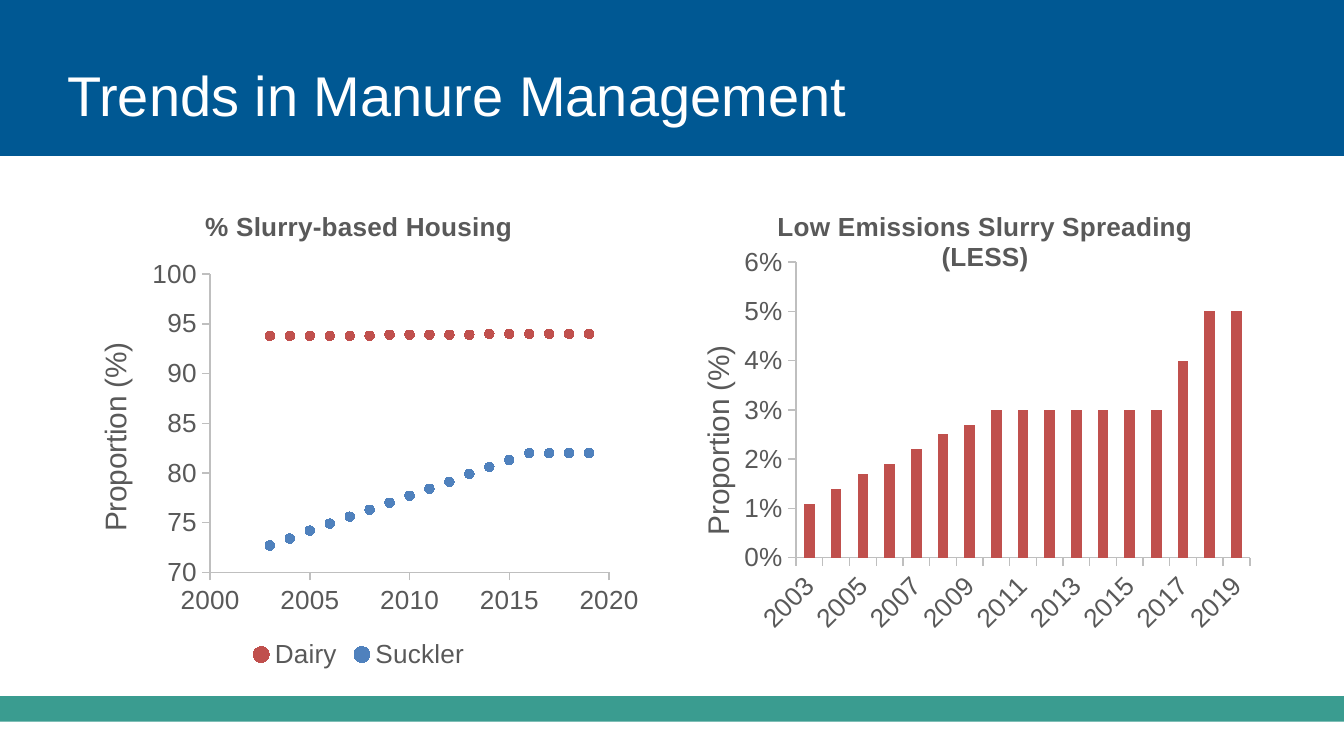
import pptx
import pptx.chart.data
import pptx.dml.color
import pptx.enum.chart
import pptx.enum.shapes
import pptx.enum.text
import pptx.oxml
import pptx.oxml.ns
import pptx.util
from pptx.util import Inches

# Content; plot boxes are percentages of the chart: left, top, width, height
TITLE = "Trends in Manure Management"
YEARS = list(range(2003, 2020))
AXIS_TITLE = "Proportion (%)"
HOUSING = {
    "title": "% Slurry-based Housing",
    "scale": (70, 100, 5),
    "format": "0",
    "plot": (24.5, 17.7, 68.4, 61.3),
    "series": {
        "Dairy": [93.8] * 6 + [93.9] * 5 + [94] * 6,
        "Suckler": [72.7, 73.4, 74.2, 74.9, 75.6, 76.3, 77, 77.7, 78.4,
                    79.1, 79.9, 80.6, 81.3, 82, 82, 82, 82],
    },
}
SPREADING = {
    "title": "Low Emissions Slurry Spreading (LESS)",
    "scale": (0, 0.06, 0.01),
    "format": "0%",
    "plot": (17.6, 15.2, 77.8, 60.8),
    "series": {
        "Series 1": [0.011, 0.014, 0.017, 0.019, 0.022, 0.025, 0.027]
                    + [0.03] * 7 + [0.04, 0.05, 0.05],
    },
}
THEME = {
    "font": "Arial",
    "band": "005893", "strip": "3A9C90", "title": "FFFFFF",
    "text": "595959", "axis": "BFBFBF", "series": ["C0504D", "4F81BD"],
    "title_size": 30, "axis_title_size": 16, "chart_size": 14,
}
MARGIN, CHART_TOP, CHART_WIDTH, CHART_HEIGHT = 0.5, 1.4, 4.34, 3.62
SLIDE_WIDTH = 10
SLIDE_HEIGHT = SLIDE_WIDTH * 9 / 16


def color(value):
    return pptx.dml.color.RGBColor.from_string(value)


def style_font(font, size, value, bold=False):
    font.name, font.bold = THEME["font"], bold
    font.size = pptx.util.Pt(size)
    font.color.rgb = color(value)


def add_band(slide, top, height, fill):
    shape = slide.shapes.add_shape(
        pptx.enum.shapes.MSO_SHAPE.RECTANGLE,
        0, Inches(top), Inches(SLIDE_WIDTH), Inches(height))
    shape.shadow.inherit = False
    shape.fill.solid()
    shape.fill.fore_color.rgb = color(fill)
    shape.line.fill.background()
    return shape


def add_title_text(text_frame, text, size, value, bold=False):
    run = text_frame.paragraphs[0].add_run()
    run.text = text
    style_font(run.font, size, value, bold)


def set_plot_layout(chart, box):
    plot_area = chart.plots[0]._element.getparent()
    for layout in plot_area.findall(pptx.oxml.ns.qn("c:layout")):
        plot_area.remove(layout)
    places = "".join(f'<c:{name} val="{percent / 100:.3f}"/>'
                     for name, percent in zip("xywh", box))
    plot_area.insert(0, pptx.oxml.parse_xml(
        f'<c:layout {pptx.oxml.ns.nsdecls("c")}><c:manualLayout>'
        '<c:layoutTarget val="inner"/><c:xMode val="edge"/><c:yMode val="edge"/>'
        f'{places}</c:manualLayout></c:layout>'))


def set_scale(axis, minimum, maximum, major):
    axis.minimum_scale, axis.maximum_scale = minimum, maximum
    axis.major_unit = major


def set_number_format(axis, number_format):
    axis.tick_labels.number_format = number_format
    axis.tick_labels.number_format_is_linked = False


def add_chart(slide, content, kind, data, column):
    left = MARGIN + column * (SLIDE_WIDTH - 2 * MARGIN - CHART_WIDTH)
    chart = slide.shapes.add_chart(
        kind, Inches(left), Inches(CHART_TOP),
        Inches(CHART_WIDTH), Inches(CHART_HEIGHT), data).chart
    style_font(chart.font, THEME["chart_size"], THEME["text"])
    chart.has_legend = False
    chart.has_title = True
    add_title_text(chart.chart_title.text_frame, content["title"],
                   THEME["chart_size"], THEME["text"], True)
    chart.plots[0].vary_by_categories = False
    # Axes
    for axis in (chart.category_axis, chart.value_axis):
        axis.has_major_gridlines = False
        axis.major_tick_mark = pptx.enum.chart.XL_TICK_MARK.OUTSIDE
        axis.minor_tick_mark = pptx.enum.chart.XL_TICK_MARK.NONE
        axis.format.line.color.rgb = color(THEME["axis"])
        axis.format.line.width = pptx.util.Pt(0.75)
        style_font(axis.tick_labels.font, THEME["chart_size"], THEME["text"])
    set_scale(chart.value_axis, *content["scale"])
    set_number_format(chart.value_axis, content["format"])
    add_title_text(chart.value_axis.axis_title.text_frame, AXIS_TITLE,
                   THEME["axis_title_size"], THEME["text"])
    set_plot_layout(chart, content["plot"])
    return chart


def add_housing_chart(slide):
    data = pptx.chart.data.XyChartData()
    for name, values in HOUSING["series"].items():
        series = data.add_series(name)
        for year, value in zip(YEARS, values):
            series.add_data_point(year, value)
    chart = add_chart(slide, HOUSING,
                      pptx.enum.chart.XL_CHART_TYPE.XY_SCATTER, data, 0)
    set_scale(chart.category_axis, 2000, 2020, 5)
    set_number_format(chart.category_axis, "0")
    for series, value in zip(chart.plots[0].series, THEME["series"]):
        series.smooth = False
        series.format.line.fill.background()
        series.marker.style = pptx.enum.chart.XL_MARKER_STYLE.CIRCLE
        series.marker.size = 5
        series.marker.format.fill.solid()
        series.marker.format.fill.fore_color.rgb = color(value)
        series.marker.format.line.color.rgb = color(value)
    chart.has_legend = True
    chart.legend.position = pptx.enum.chart.XL_LEGEND_POSITION.BOTTOM
    chart.legend.include_in_layout = False
    style_font(chart.legend.font, THEME["chart_size"], THEME["text"])


def add_spreading_chart(slide):
    data = pptx.chart.data.CategoryChartData()
    data.categories = [str(year) for year in YEARS]
    for name, values in SPREADING["series"].items():
        data.add_series(name, values)
    chart = add_chart(slide, SPREADING,
                      pptx.enum.chart.XL_CHART_TYPE.COLUMN_CLUSTERED, data, 1)
    chart.plots[0].gap_width = 150
    # Slanted year labels
    labels = chart.category_axis._element.find(pptx.oxml.ns.qn("c:txPr"))
    labels.find(pptx.oxml.ns.qn("a:bodyPr")).set("rot", str(-45 * 60000))
    fill = chart.plots[0].series[0].format.fill
    fill.solid()
    fill.fore_color.rgb = color(THEME["series"][0])


def main():
    presentation = pptx.Presentation()
    presentation.slide_width = Inches(SLIDE_WIDTH)
    presentation.slide_height = Inches(SLIDE_HEIGHT)
    slide = presentation.slides.add_slide(presentation.slide_layouts[5])

    # Bands, placed behind the title
    bands = [add_band(slide, -0.02, 1.18, THEME["band"]),
             add_band(slide, 5.18, 0.19, THEME["strip"])]
    title = slide.shapes.title
    for band in bands:
        title._element.addprevious(band._element)

    # Title
    title.left, title.top = Inches(MARGIN), Inches(0.23)
    title.width, title.height = Inches(9), Inches(0.94)
    frame = title.text_frame
    frame.margin_left = frame.margin_right = 0
    frame.margin_top = frame.margin_bottom = 0
    frame.vertical_anchor = pptx.enum.text.MSO_ANCHOR.MIDDLE
    frame.paragraphs[0].alignment = pptx.enum.text.PP_ALIGN.LEFT
    add_title_text(frame, TITLE, THEME["title_size"], THEME["title"])

    # Charts
    add_spreading_chart(slide)
    add_housing_chart(slide)
    presentation.save("out.pptx")


if __name__ == "__main__":
    main()
